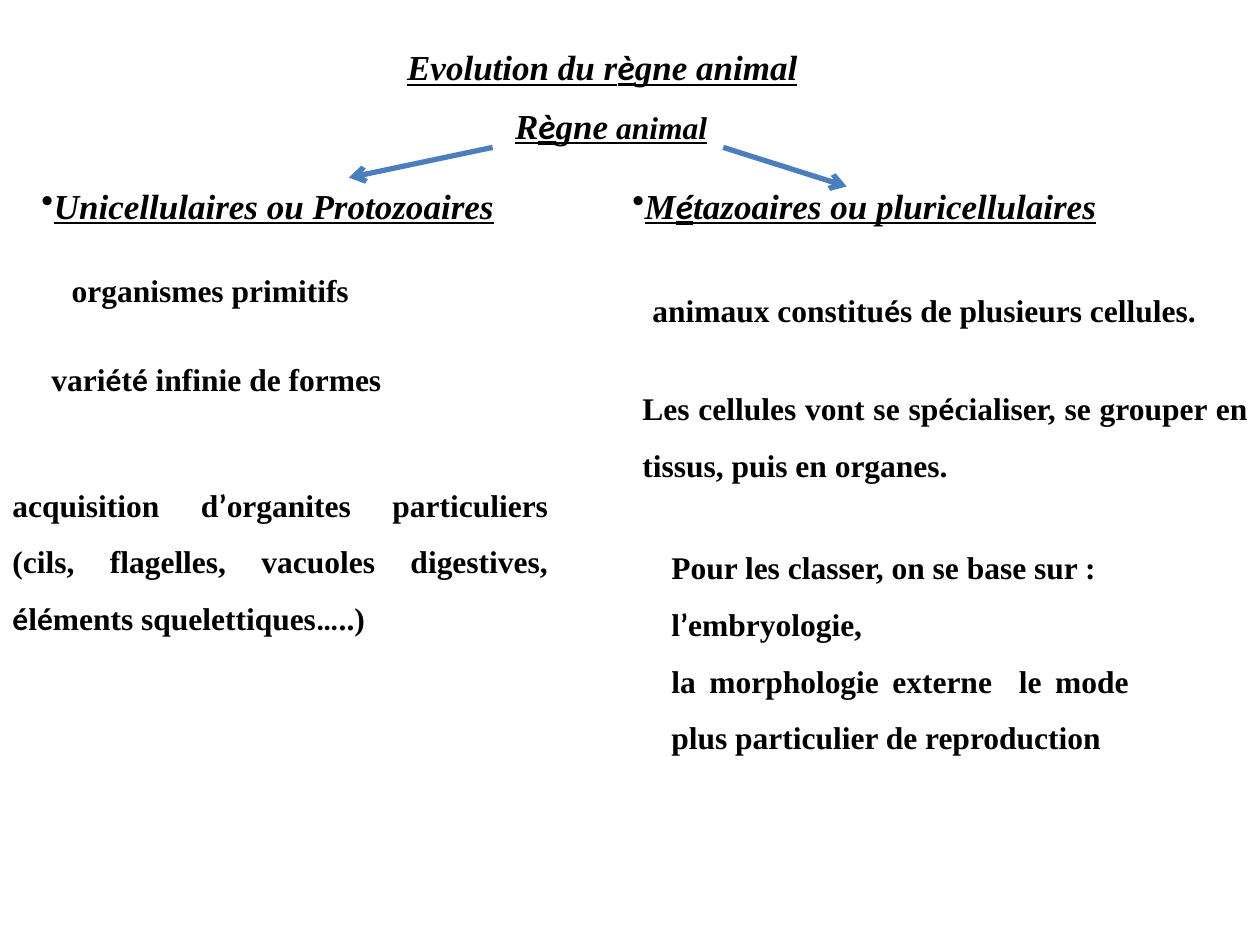
from itertools import groupby

from lxml import etree
from pptx import Presentation
from pptx import util as u
from pptx.dml.color import RGBColor
from pptx.enum import shapes, text
from pptx.oxml.ns import qn

deck = Presentation()
deck.slide_width, deck.slide_height = u.Inches(10), u.Inches(7.5)
page = deck.slides.add_slide(deck.slide_layouts[6])

# Grid of 100 columns by 75 rows
COLUMN = deck.slide_width / 100
ROW = deck.slide_height / 75
LEFT, CENTER, JUSTIFY = text.PP_ALIGN.LEFT, text.PP_ALIGN.CENTER, text.PP_ALIGN.JUSTIFY
TOP, MIDDLE = text.MSO_ANCHOR.TOP, text.MSO_ANCHOR.MIDDLE
CALIBRI_MARKS = "éè’…"


def color(hex_string):
    return RGBColor.from_string(hex_string)


def add_text(place, lines, heading=False, align=LEFT, anchor=TOP, wrap=False, bullet=False):
    """Each line is a list of (words, size) pieces; accents and marks are in Calibri."""
    left, top, width, height = place
    box = page.shapes.add_textbox(int(left * COLUMN), int(top * ROW),
                                  int(width * COLUMN), int(height * ROW))
    frame = box.text_frame
    frame.word_wrap = wrap
    frame.auto_size = text.MSO_AUTO_SIZE.SHAPE_TO_FIT_TEXT
    frame.vertical_anchor = anchor
    for number, pieces in enumerate(lines):
        para = frame.add_paragraph() if number else frame.paragraphs[0]
        para.alignment = align
        if not heading:
            para.line_spacing = 1.5
        if bullet:
            etree.SubElement(para._p.get_or_add_pPr(), qn("a:buChar")).set("char", "•")
        for words, size in pieces:
            for marked, letters in groupby(words, lambda letter: letter in CALIBRI_MARKS):
                span = para.add_run()
                span.text = "".join(letters)
                span.font.name = "Calibri" if marked else "Times New Roman"
                span.font.size = u.Pt(size)
                span.font.bold = True
                span.font.italic = span.font.underline = heading or None
                span.font.color.rgb = color("000000")


# Title and root of the tree
add_text((31.2, 3.1, 33.2, 4.4), [[("Evolution du règne animal", 20)]],
         heading=True, align=CENTER, anchor=MIDDLE)
add_text((39.8, 7.8, 17.4, 4.4), [[("Règne", 20), (" animal", 18)]],
         heading=True, align=CENTER)

# Headings of the two branches
for left, width, words in [(2.3, 50.8, "Unicellulaires ou Protozoaires"),
                           (49.2, 47.7, "Métazoaires ou pluricellulaires")]:
    add_text((left, 14.1, width, 4.4), [[(words, 20)]],
             heading=True, anchor=MIDDLE, wrap=True, bullet=True)

# Arrows from the root to the branches
for start_x, end_x, end_y in [(39.1, 27.7, 14.1), (57.4, 67.2, 14.8)]:
    arrow = page.shapes.add_connector(
        shapes.MSO_CONNECTOR.STRAIGHT, int(start_x * COLUMN), int(11.7 * ROW),
        int(end_x * COLUMN), int(end_y * ROW))
    arrow.line.color.rgb = color("4B7EBC")
    arrow.line.width = u.Pt(3)
    etree.SubElement(arrow.line._get_or_add_ln(), qn("a:tailEnd")).set("type", "arrow")
    etree.SubElement(arrow._element.spPr, qn("a:effectLst"))

# Single-line statements
for place, words in [
    ((4.7, 19.5, 24.2, 5.6), "organismes primitifs"),
    ((3.1, 26.6, 29.1, 5.6), "variété infinie de formes"),
    ((50.8, 21.1, 45.6, 5.6), "animaux constitués de plusieurs cellules."),
]:
    add_text(place, [[(words, 18)]])

# Justified paragraphs
for place, anchor, lines in [
    ((0, 36.7, 44.5, 14.2), MIDDLE,
     ["acquisition d’organites particuliers (cils, flagelles, vacuoles digestives, "
      "éléments squelettiques…..)"]),
    ((50, 28.9, 50, 10.1), TOP,
     ["Les cellules vont se spécialiser, se grouper en tissus, puis en organes."]),
    ((52.3, 41.4, 38.3, 19.2), MIDDLE,
     ["Pour les classer, on se base sur :",
      "l’embryologie,",
      "la morphologie externe  le mode plus particulier de reproduction"]),
]:
    add_text(place, [[(line, 18)] for line in lines], align=JUSTIFY, anchor=anchor, wrap=True)

deck.save("out.pptx")
